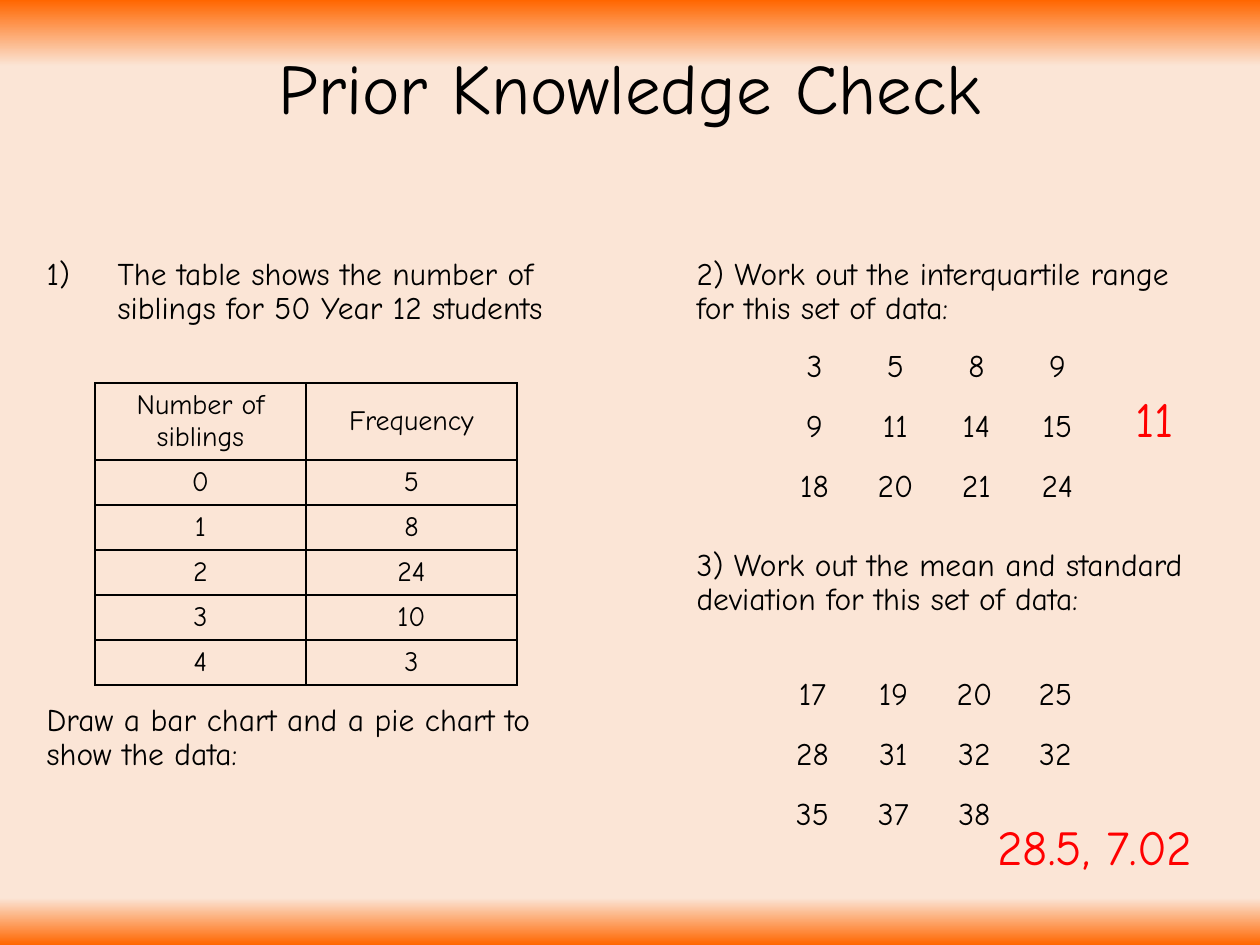
import copy

import pptx
import pptx.dml.color
import pptx.enum.text
import pptx.oxml
import pptx.oxml.ns
import pptx.util

EMU_PER_PX = 914400 // 126
FONT = "Comic Neue"
BLACK, RED = "000000", "FF0000"
ALIGN = pptx.enum.text.PP_ALIGN
ANCHOR = pptx.enum.text.MSO_ANCHOR
AUTO = pptx.enum.text.MSO_AUTO_SIZE

BACKGROUND = [(0, "FF6600"), (7, "FBE5D6"), (95, "FBE5D6"), (100, "FF6600")]

TITLE = ("Prior Knowledge Check", (87, 0, 1086, 183))

# (text, space before in pt, numbered)
QUESTIONS = [
    ((34, 252, 541, 600), [
        ("The table shows the number of siblings for 50 Year 12 students", 10, True),
        ("Draw a bar chart and a pie chart to show the data:", 216, False),
    ]),
    ((684, 252, 541, 600), [
        ("2) Work out the interquartile range for this set of data:", 10, False),
        ("3) Work out the mean and standard deviation for this set of data:", 127.5, False),
    ]),
]

TABLES = [
    dict(at=(95, 383), col=211, rows=[77] + [45] * 5, size=16, border=BLACK, cells=[
        ["Number of siblings", "Frequency"],
        ["0", "5"], ["1", "8"], ["2", "24"], ["3", "10"], ["4", "3"],
    ]),
    dict(at=(774, 337), col=81, rows=[60] * 3, size=18, border=None, cells=[
        ["3", "5", "8", "9"], ["9", "11", "14", "15"], ["18", "20", "21", "24"],
    ]),
    dict(at=(772, 665), col=81, rows=[60] * 3, size=18, border=None, cells=[
        ["17", "19", "20", "25"], ["28", "31", "32", "32"], ["35", "37", "38", ""],
    ]),
]

ANSWERS = [("11", (1123, 382, 71, 72)), ("28.5, 7.02", (985, 810, 261, 72))]


def px(n):
    return pptx.util.Emu(n * EMU_PER_PX)


def color(value):
    return pptx.dml.color.RGBColor.from_string(value)


def element(xml):
    return pptx.oxml.parse_xml(xml.replace(" ", " " + pptx.oxml.ns.nsdecls("a") + " ", 1))


def style(p, size, value=BLACK, align=ALIGN.LEFT):
    p.alignment = align
    p.font.name = FONT
    p.font.size = pptx.util.Pt(size)
    p.font.color.rgb = color(value)


def place(sp, box):
    sp.left, sp.top, sp.width, sp.height = map(px, box)


def set_background(slide):
    fill = slide.background.fill
    fill.gradient()
    fill.gradient_angle = 270
    stops = fill.gradient_stops
    gs_list = slide.background._cSld.find(".//" + pptx.oxml.ns.qn("a:gsLst"))
    while len(gs_list) < len(BACKGROUND):
        gs_list.append(copy.deepcopy(gs_list[0]))
    for stop, (position, value) in zip(fill.gradient_stops, BACKGROUND):
        stop.position = position / 100
        stop.color.rgb = color(value)


def set_number(p, numbered):
    pPr = p._p.get_or_add_pPr()
    indent = px(71) if numbered else 0
    pPr.set("marL", str(indent))
    pPr.set("indent", str(-indent))
    bullet = '<a:buAutoNum type="arabicParenR"/>' if numbered else "<a:buNone />"
    pPr.insert_element_before(element(bullet), "a:tabLst", "a:defRPr", "a:extLst")


def fill_question(sp, box, paragraphs):
    place(sp, box)
    tf = sp.text_frame
    tf.auto_size = AUTO.NONE
    tf.text = "\n".join(text for text, _, _ in paragraphs)
    for p, (_, before, numbered) in zip(tf.paragraphs, paragraphs):
        style(p, 18)
        p.line_spacing = 0.9
        p.space_before = pptx.util.Pt(before)
        set_number(p, numbered)


def set_borders(cell, value):
    paint = f'<a:solidFill><a:srgbClr val="{value}"/></a:solidFill>' if value else "<a:noFill/>"
    tcPr = cell._tc.get_or_add_tcPr()
    for i, side in enumerate("LRTB"):
        tcPr.insert(i, element(f'<a:ln{side} w="12700">{paint}</a:ln{side}>'))


def add_grid(slide, at, col, rows, size, border, cells):
    count = len(cells[0])
    frame = slide.shapes.add_table(len(rows), count, *map(px, (*at, col * count, sum(rows))))
    table = frame.table
    table.first_row = table.horz_banding = False
    for column in table.columns:
        column.width = px(col)
    for row, height, texts in zip(table.rows, rows, cells):
        row.height = px(height)
        for cell, text in zip(row.cells, texts):
            cell.text = text
            cell.vertical_anchor = ANCHOR.MIDDLE
            cell.fill.background()
            set_borders(cell, border)
            style(cell.text_frame.paragraphs[0], size, align=ALIGN.CENTER)


def add_answer(slide, text, box):
    tf = slide.shapes.add_textbox(*map(px, box)).text_frame
    tf.word_wrap = False
    tf.auto_size = AUTO.SHAPE_TO_FIT_TEXT
    tf.text = text
    style(tf.paragraphs[0], 28, RED)


def main():
    prs = pptx.Presentation()
    prs.slide_width, prs.slide_height = px(1260), px(945)
    slide = prs.slides.add_slide(prs.slide_layouts[3])
    set_background(slide)

    text, box = TITLE
    title = slide.shapes.title
    place(title, box)
    title.text_frame.text = text
    title.text_frame.auto_size = AUTO.NONE
    title.text_frame.vertical_anchor = ANCHOR.MIDDLE
    p = title.text_frame.paragraphs[0]
    style(p, 40.5, align=ALIGN.CENTER)
    p.line_spacing = 0.9

    for idx, (box, paragraphs) in enumerate(QUESTIONS, 1):
        fill_question(slide.placeholders[idx], box, paragraphs)
    for grid in TABLES:
        add_grid(slide, **grid)
    for text, box in ANSWERS:
        add_answer(slide, text, box)
    prs.save("out.pptx")


if __name__ == "__main__":
    main()
